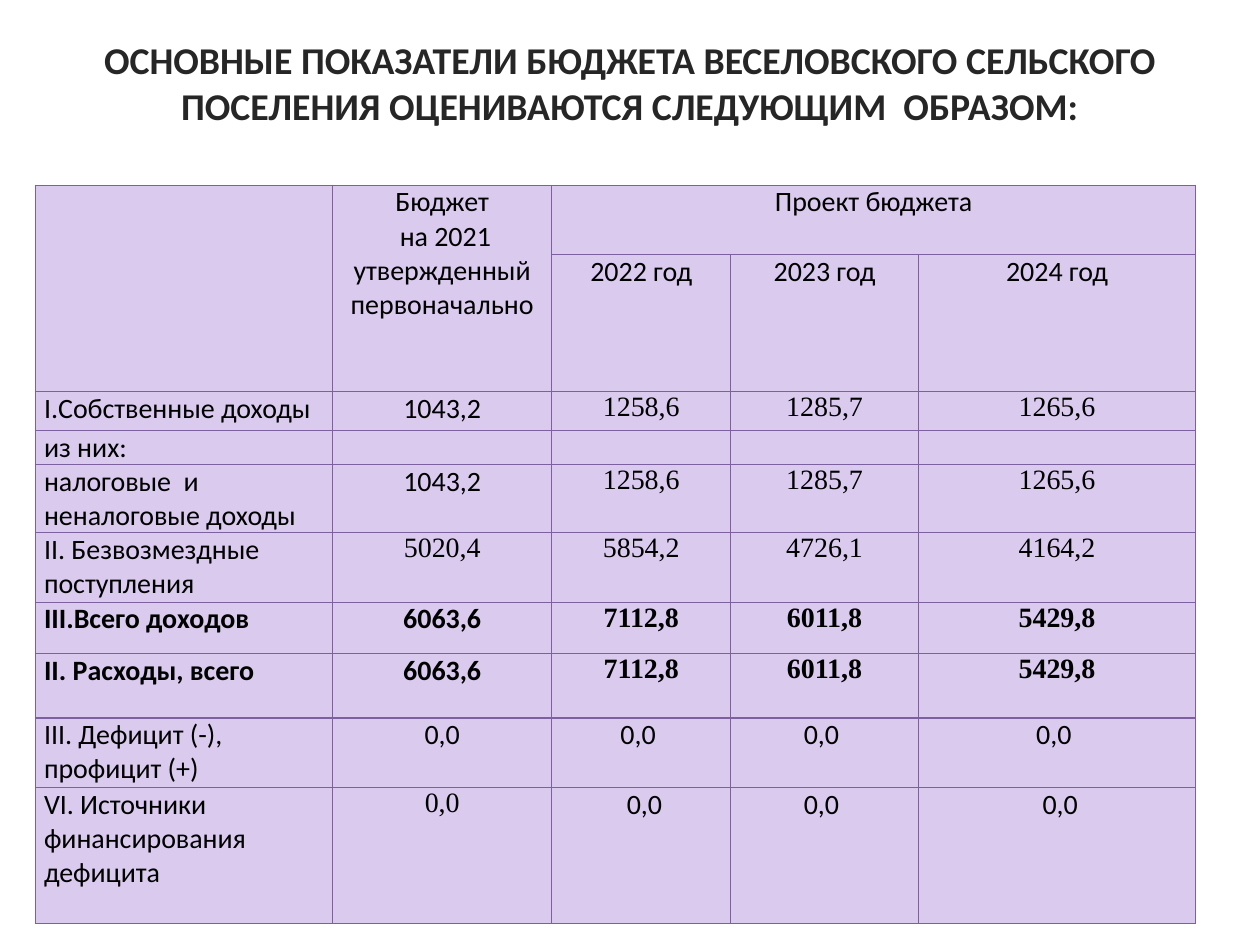
from lxml import etree
from pptx import Presentation
from pptx import util as u
from pptx.dml.color import RGBColor
from pptx.enum import text
from pptx.oxml.ns import qn

# Content
TITLE = ("ОСНОВНЫЕ ПОКАЗАТЕЛИ БЮДЖЕТА ВЕСЕЛОВСКОГО СЕЛЬСКОГО "
         "ПОСЕЛЕНИЯ ОЦЕНИВАЮТСЯ СЛЕДУЮЩИМ  ОБРАЗОМ:")
HEADERS = [
    ["", "Бюджет\n на 2021 утвержденный первоначально", "Проект бюджета", "", ""],
    ["", "", "2022 год", "2023 год", "2024 год"],
]
OWN_INCOME = ["1043,2", "1258,6", "1285,7", "1265,6"]
TOTALS = ["6063,6", "7112,8", "6011,8", "5429,8"]
BUDGET_ROWS = [
    ["I.Собственные доходы", *OWN_INCOME],
    ["из них:", "", "", "", ""],
    ["налоговые  и неналоговые доходы", *OWN_INCOME],
    ["II. Безвозмездные поступления", "5020,4", "5854,2", "4726,1", "4164,2"],
    ["III.Всего доходов", *TOTALS],
    ["II. Расходы, всего", *TOTALS],
    ["III. Дефицит (-), профицит (+) ", "0,0", "0,0 ", "0,0 ", "0,0 "],
    ["VI. Источники финансирования дефицита", "0,0", " 0,0", "0,0 ", " 0,0"],
]
ROWS = HEADERS + BUDGET_ROWS
BOLD_ROWS = {6, 7}
# Cells set in the serif face: project years of rows 2-7, two cells of the 2021 column
SERIF_CELLS = {(r, c) for r in range(2, 8) for c in range(2, 5)} | {(5, 1), (9, 1)}
MERGES = [((0, 0), (1, 0)), ((0, 1), (1, 1)), ((0, 2), (0, 4))]

# Grid, in inches
COLUMN_WIDTHS = [2.36, 1.74, 1.42, 1.49, 2.2]
ROW_HEIGHTS = [0.55, 1.09, 0.31, 0.27, 0.54, 0.55, 0.41, 0.51, 0.55, 1.08]
TABLE_LEFT, TABLE_TOP = 0.28, 1.47

SANS, SERIF = "Calibri", "Times New Roman"
BODY_SIZE = 16
BLACK = RGBColor(0x00, 0x00, 0x00)
CHARCOAL = RGBColor(0x26, 0x26, 0x26)
LILAC = RGBColor(0xD9, 0xCA, 0xEE)
PURPLE = RGBColor(0x7D, 0x60, 0xA0)


def write(frame, content, size=BODY_SIZE, font=SANS, color=BLACK, bold=False,
          align=text.PP_ALIGN.CENTER):
    """Put each line of the content in a paragraph of its own."""
    frame.word_wrap = True
    for index, line in enumerate(content.split("\n")):
        para = frame.paragraphs[0] if index == 0 else frame.add_paragraph()
        para.alignment = align
        if not line:  # an empty cell keeps the row low
            para._p.get_or_add_endParaRPr().set("sz", str(size * 100))
            continue
        span = para.add_run()
        span.text = line
        span.font.size = u.Pt(size)
        span.font.name = font
        span.font.bold = bold
        span.font.color.rgb = color


def add_borders(cell, color, width):
    properties = cell._tc.get_or_add_tcPr()
    for index, side in enumerate(("a:lnL", "a:lnR", "a:lnT", "a:lnB")):
        line = etree.Element(qn(side), w=str(u.Pt(width)))
        fill = etree.SubElement(line, qn("a:solidFill"))
        etree.SubElement(fill, qn("a:srgbClr"), val=str(color))
        properties.insert(index, line)


def add_title(page):
    box = page.shapes.add_textbox(*map(u.Inches, (0.5, 0.13, 9, 1.42)))
    frame = box.text_frame
    frame.vertical_anchor = text.MSO_ANCHOR.MIDDLE
    frame.margin_bottom = u.Inches(0.42)
    write(frame, TITLE, size=21.6, color=CHARCOAL, bold=True)


def add_budget_table(page):
    table = page.shapes.add_table(
        len(ROWS), len(COLUMN_WIDTHS), u.Inches(TABLE_LEFT), u.Inches(TABLE_TOP),
        u.Inches(sum(COLUMN_WIDTHS)), u.Inches(sum(ROW_HEIGHTS))).table
    for column, width in zip(table.columns, COLUMN_WIDTHS):
        column.width = u.Inches(width)
    for row, height in zip(table.rows, ROW_HEIGHTS):
        row.height = u.Inches(height)

    for r, values in enumerate(ROWS):
        for c, value in enumerate(values):
            cell = table.cell(r, c)
            cell.margin_left = cell.margin_right = u.Inches(0.07)
            cell.margin_top = cell.margin_bottom = 0
            cell.fill.solid()
            cell.fill.fore_color.rgb = LILAC
            add_borders(cell, PURPLE, 0.75)
            write(cell.text_frame, value, bold=r in BOLD_ROWS,
                  font=SERIF if (r, c) in SERIF_CELLS else SANS,
                  align=text.PP_ALIGN.CENTER if c else text.PP_ALIGN.LEFT)

    for first, last in MERGES:
        table.cell(*first).merge(table.cell(*last))


def main():
    deck = Presentation()
    deck.slide_width, deck.slide_height = u.Inches(10), u.Inches(7.5)
    page = deck.slides.add_slide(deck.slide_layouts[6])
    add_title(page)
    add_budget_table(page)
    deck.save("out.pptx")


if __name__ == "__main__":
    main()
